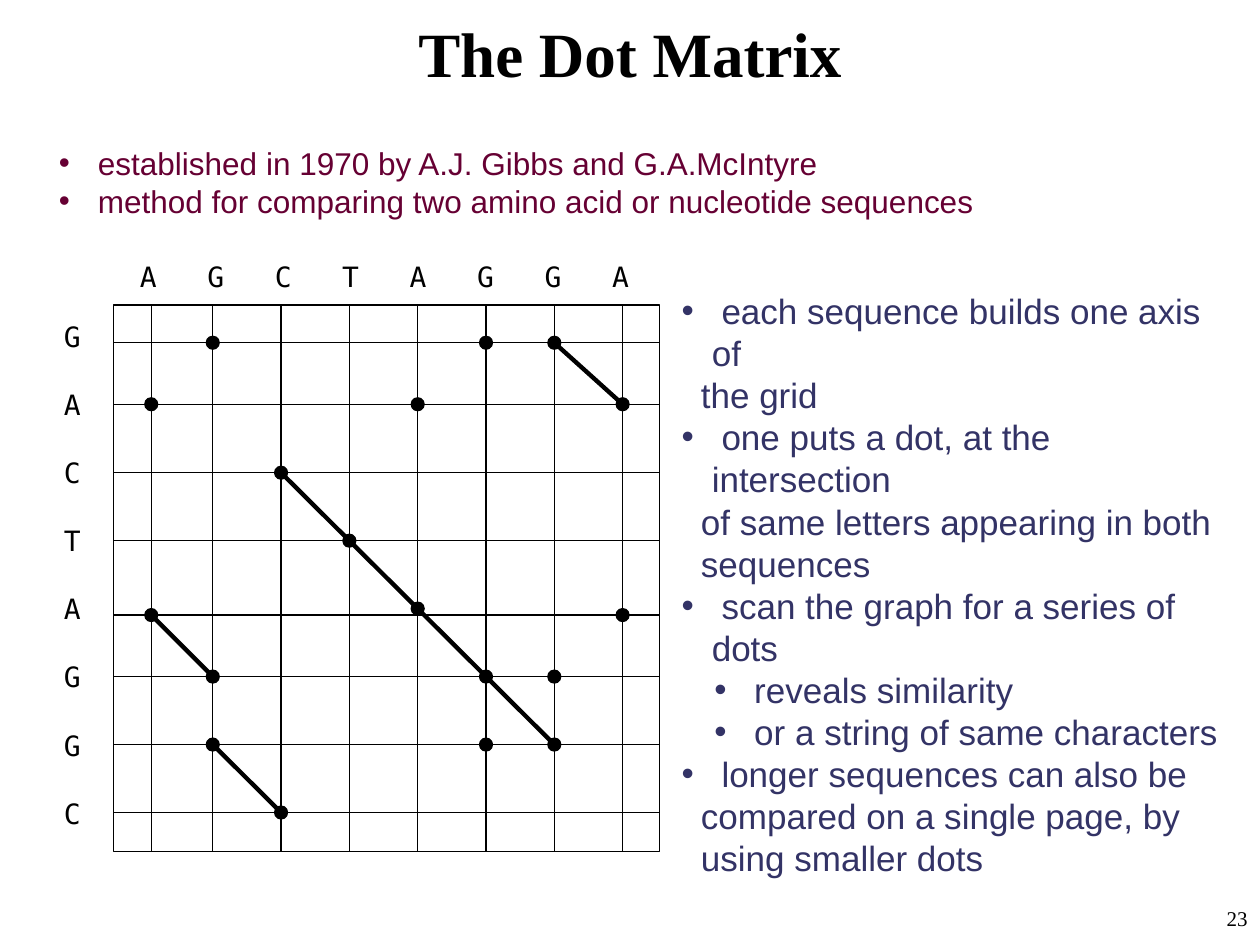
from dataclasses import dataclass
from itertools import product

from lxml.etree import SubElement
from pptx import Presentation
from pptx.dml.color import RGBColor
from pptx.enum.shapes import MSO_CONNECTOR, MSO_SHAPE
from pptx.enum.text import MSO_ANCHOR, PP_ALIGN
from pptx.oxml.ns import qn
from pptx.util import Cm, Pt

BLACK = RGBColor(0x00, 0x00, 0x00)
WHITE = RGBColor(0xFF, 0xFF, 0xFF)
PLUM = RGBColor(0x66, 0x00, 0x33)
NAVY = RGBColor(0x33, 0x33, 0x66)

# Grid geometry in centimetres
GRID_LEFT, GRID_TOP, GRID_SIDE = 2.29, 6.15, 11.01
DOT_SIZE = 0.26
LETTER_STEP = 1.36
COLUMN_LETTERS = "AGCTAGGA"
ROW_LETTERS = "GACTAGGC"
COLUMN_X = [3.05] + [4.29 + 1.377 * step for step in range(7)]
ROW_Y = [6.91, 8.15, 9.53, 10.9, 12.4, 13.64, 15.01, 16.38]
# This dot sits on the long diagonal, slightly above its row line
DOT_Y_EXCEPTIONS = {(4, 4): 12.27}


@dataclass(frozen=True)
class Style:
    font: str
    size: float
    color: RGBColor
    bold: bool = False


@dataclass(frozen=True)
class Line:
    text: str
    margin: float = 0.61
    bullet: bool = True


@dataclass(frozen=True)
class Diagonal:
    """Run of matches, from one (column, row) to another."""
    start: tuple[int, int]
    end: tuple[int, int]


TITLE = Style("Times New Roman", 36, BLACK, True)
LETTER = Style("DejaVu Sans Mono", 16, BLACK)
INTRO = Style("Arial", 18, PLUM)
BODY = Style("Arial", 20, NAVY)
NUMBER = Style("Times New Roman", 12, BLACK)

CONTINUED = {"margin": 0.39, "bullet": False}
INTRO_LINES = [
    Line(" established in 1970 by A.J. Gibbs and G.A.McIntyre"),
    Line(" method for comparing two amino acid or nucleotide sequences"),
]
BODY_LINES = [
    Line(" each sequence builds one axis of"),
    Line("the grid", **CONTINUED),
    Line(" one puts a dot, at the intersection"),
    Line("of same letters appearing in both", **CONTINUED),
    Line("sequences", **CONTINUED),
    Line(" scan the graph for a series of dots"),
    Line(" reveals similarity", 1.27),
    Line(" or a string of same characters", 1.27),
    Line(" longer sequences can also be"),
    Line("compared on a single page, by", **CONTINUED),
    Line("using smaller dots", **CONTINUED),
]
DIAGONALS = [
    Diagonal((2, 2), (6, 6)),
    Diagonal((6, 0), (7, 1)),
    Diagonal((1, 6), (2, 7)),
    Diagonal((0, 4), (1, 5)),
]


def add_box(page, left: float, top: float, width: float, height: float, wrap: bool = True):
    box = page.shapes.add_textbox(Cm(left), Cm(top), Cm(width), Cm(height))
    box.text_frame.word_wrap = wrap
    return box.text_frame


def add_para(frame, index: int):
    return frame.paragraphs[0] if index == 0 else frame.add_paragraph()


def add_span(para, text: str, style: Style) -> None:
    span = para.add_run()
    span.text = text
    span.font.name = style.font
    span.font.size = Pt(style.size)
    span.font.bold = style.bold
    span.font.color.rgb = style.color


def add_lines(frame, lines: list[Line], style: Style, spacing: float) -> None:
    for index, line in enumerate(lines):
        para = add_para(frame, index)
        para.line_spacing = Pt(spacing)
        properties = para._p.get_or_add_pPr()
        properties.set("marL", str(Cm(line.margin)))
        properties.set("indent", str(-Cm(0.61) if line.bullet else 0))
        if line.bullet:
            SubElement(properties, qn("a:buFont"), typeface="Arial")
            SubElement(properties, qn("a:buChar"), char="•")
        add_span(para, line.text, style)


def add_line(page, x1: float, y1: float, x2: float, y2: float, weight: float) -> None:
    line = page.shapes.add_connector(
        MSO_CONNECTOR.STRAIGHT, Cm(x1), Cm(y1), Cm(x2), Cm(y2))
    line.line.color.rgb = BLACK
    line.line.width = Pt(weight)
    SubElement(line._element.spPr, qn("a:effectLst"))


def add_filled(page, kind, left: float, top: float, side: float, fill: RGBColor) -> None:
    shape = page.shapes.add_shape(kind, Cm(left), Cm(top), Cm(side), Cm(side))
    shape.shadow.inherit = False
    shape.fill.solid()
    shape.fill.fore_color.rgb = fill
    shape.line.color.rgb = BLACK
    shape.line.width = Pt(0.75)


def add_axis_letters(page) -> None:
    # Column letters stand on evenly spaced tab stops
    para = add_box(page, 2.57, 5.11, 10.36, 0.94, wrap=False).paragraphs[0]
    stops = SubElement(para._p.get_or_add_pPr(), qn("a:tabLst"))
    for step in range(1, len(COLUMN_LETTERS)):
        SubElement(stops, qn("a:tab"), pos=str(Cm(LETTER_STEP * step)), algn="l")
    add_span(para, "\t".join(COLUMN_LETTERS), LETTER)

    # Row letters are spread by paragraph spacing
    frame = add_box(page, 1.04, 6.32, 0.86, 10.44, wrap=False)
    for index, letter in enumerate(ROW_LETTERS):
        para = add_para(frame, index)
        if index:
            para.space_before = Pt(19.7)
        add_span(para, letter, LETTER)


def add_matrix(page) -> None:
    add_filled(page, MSO_SHAPE.RECTANGLE, GRID_LEFT, GRID_TOP, GRID_SIDE, WHITE)
    for y in ROW_Y:
        add_line(page, GRID_LEFT, y, GRID_LEFT + GRID_SIDE, y, 0.75)
    for x in COLUMN_X:
        add_line(page, x, GRID_TOP, x, GRID_TOP + GRID_SIDE, 0.75)
    for diagonal in DIAGONALS:
        (column1, row1), (column2, row2) = diagonal.start, diagonal.end
        add_line(page, COLUMN_X[column1], ROW_Y[row1],
                 COLUMN_X[column2], ROW_Y[row2], 2.5)
    # A dot wherever the two sequences share a letter
    for row, column in product(range(len(ROW_LETTERS)), range(len(COLUMN_LETTERS))):
        if ROW_LETTERS[row] == COLUMN_LETTERS[column]:
            y = DOT_Y_EXCEPTIONS.get((column, row), ROW_Y[row])
            add_filled(page, MSO_SHAPE.FLOWCHART_CONNECTOR,
                       COLUMN_X[column] - DOT_SIZE / 2, y - DOT_SIZE / 2,
                       DOT_SIZE, BLACK)


def main() -> None:
    deck = Presentation()
    deck.slide_width, deck.slide_height = Cm(25.4), Cm(19.05)
    page = deck.slides.add_slide(deck.slide_layouts[6])

    # Title
    frame = add_box(page, 0, 0, 25.4, 2.13)
    frame.vertical_anchor = MSO_ANCHOR.MIDDLE
    frame.paragraphs[0].alignment = PP_ALIGN.CENTER
    add_span(frame.paragraphs[0], "The Dot Matrix", TITLE)

    # Matrix and explanations
    add_matrix(page)
    add_axis_letters(page)
    add_lines(add_box(page, 0.94, 2.77, 21.87, 1.78), INTRO_LINES, INTRO, 21.7)
    add_lines(add_box(page, 13.49, 5.72, 11.53, 11.38), BODY_LINES, BODY, 24)

    # Page number
    para = add_box(page, 20.12, 18.14, 5.28, 0.91).paragraphs[0]
    para.alignment = PP_ALIGN.RIGHT
    add_span(para, "23", NUMBER)

    deck.save("out.pptx")


if __name__ == "__main__":
    main()
